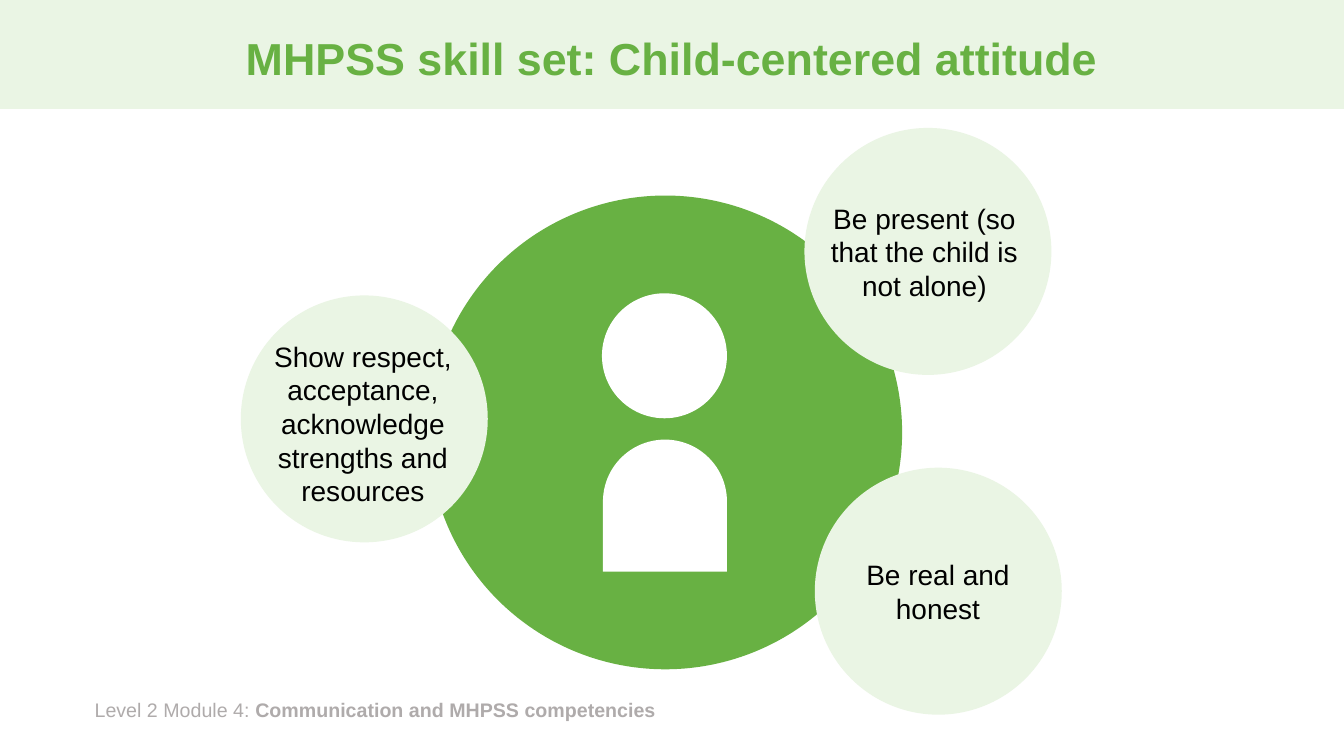
from pptx import Presentation
from pptx.dml.color import RGBColor
from pptx.enum.shapes import MSO_SHAPE
from pptx.enum.text import MSO_ANCHOR, PP_ALIGN
from pptx.util import Pt

GREEN, PALE, WHITE = "68B143", "EAF5E4", "FFFFFF"
GREY, BLACK = "AFABAB", "000000"
BUBBLE = 176.4


def color(value):
    """Turn a hex string into a colour."""
    return RGBColor.from_string(value)


def add_filled(shapes, kind, x, y, w, h, fill):
    """Add a preset shape with a plain fill and no line."""
    sp = shapes.add_shape(kind, Pt(x), Pt(y), Pt(w), Pt(h))
    sp.shadow.inherit = False
    sp.fill.solid()
    sp.fill.fore_color.rgb = color(fill)
    sp.line.fill.background()
    return sp


def style_run(r, size, fill, bold=False):
    """Set the font of a run."""
    r.font.name = "Arial"
    r.font.size = Pt(size)
    r.font.bold = bold
    r.font.color.rgb = color(fill)


def add_text(s, x, y, w, h, text, size, fill, bold=False, align=PP_ALIGN.CENTER):
    """Add a wrapped one-paragraph text box and return its paragraph."""
    tf = s.shapes.add_textbox(Pt(x), Pt(y), Pt(w), Pt(h)).text_frame
    tf.word_wrap = True
    tf.vertical_anchor = MSO_ANCHOR.MIDDLE
    p = tf.paragraphs[0]
    p.text = text
    p.alignment = align
    style_run(p.runs[0], size, fill, bold)
    return p


def add_child(s):
    """Draw the grouped child symbol inside its large circle."""
    shapes = s.shapes.add_group_shape().shapes
    add_filled(shapes, MSO_SHAPE.OVAL, 306, 139.7, 338.4, 338.4, GREEN)
    body = add_filled(shapes, MSO_SHAPE.ROUND_2_SAME_RECTANGLE,
                      430.7, 314, 88.6, 94.3, WHITE)
    body.adjustments[0] = 0.5
    body.adjustments[1] = 0
    add_filled(shapes, MSO_SHAPE.OVAL, 430, 209.5, 89.3, 89.3, WHITE)


def add_footer(s):
    """Add the module line with its title in bold."""
    p = add_text(s, 60.5, 494.6, 491, 24.5, "Level 2 Module 4: ", 14, GREY,
                 align=PP_ALIGN.LEFT)
    r = p.add_run()
    r.text = "Communication and MHPSS competencies"
    style_run(r, 14, GREY, True)


def main():
    """Build the slide and save it."""
    prs = Presentation()
    prs.slide_width, prs.slide_height = Pt(960), Pt(540)
    s = prs.slides.add_slide(prs.slide_layouts[6])

    add_filled(s.shapes, MSO_SHAPE.RECTANGLE, 0, 0, 960, 77.8, PALE)
    add_footer(s)
    add_child(s)
    title = add_text(s, 66, 9.4, 828, 68.4,
                     "MHPSS skill set: Child-centered attitude", 32, GREEN, True)
    title.line_spacing = 0.9

    attitudes = [
        ((172, 211), (149.8, 238.3, 218.9, 128.2),
         "Show respect, acceptance, acknowledge strengths and resources"),
        ((574.6, 91.4), (581.8, 139.7, 157, 79.9),
         "Be present (so that the child is not alone)"),
        ((582, 334.1), (581.8, 394.6, 176.4, 55.4), "Be real and honest"),
    ]
    for (x, y), _, _ in attitudes:
        add_filled(s.shapes, MSO_SHAPE.OVAL, x, y, BUBBLE, BUBBLE, PALE)
    for _, box, text in attitudes:
        add_text(s, *box, text, 20, BLACK)

    prs.save("out.pptx")


if __name__ == "__main__":
    main()
